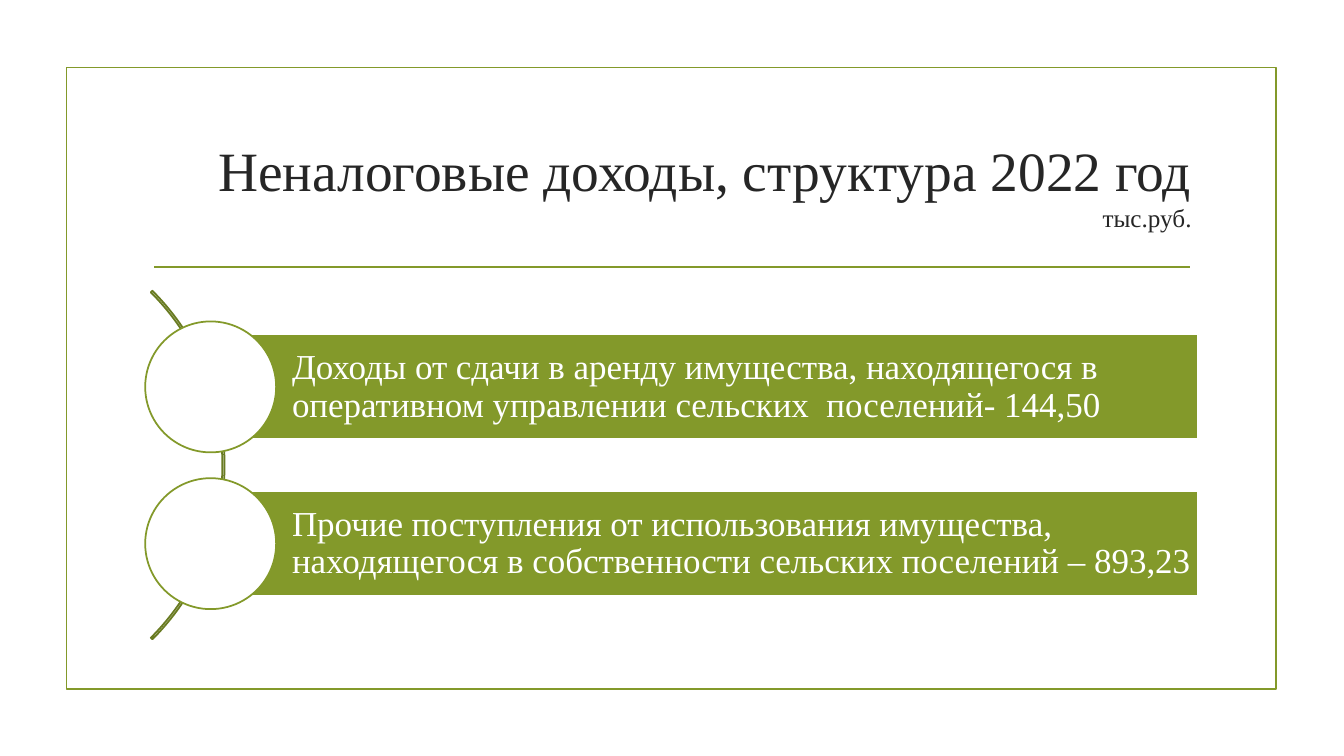
"""Build the slide on the structure of non-tax revenue in 2022."""
from lxml.etree import SubElement
from pptx import Presentation
from pptx.dml.color import RGBColor
from pptx.enum.shapes import MSO_CONNECTOR, MSO_SHAPE
from pptx.enum.text import MSO_ANCHOR, MSO_AUTO_SIZE, PP_ALIGN
from pptx.oxml.ns import qn
from pptx.util import Cm, Pt

GREEN = RGBColor(0x83, 0x99, 0x2A)
DARK_GREEN = RGBColor(0x69, 0x7B, 0x22)
WHITE = RGBColor(0xFF, 0xFF, 0xFF)
INK = RGBColor(0x26, 0x26, 0x26)
FONT = "Times New Roman"
LINE_WIDTH = Pt(1.25)

REVENUES = [
    "Доходы от сдачи в аренду имущества, находящегося в оперативном "
    "управлении сельских  поселений- 144,50",
    "Прочие поступления от использования имущества, находящегося в "
    "собственности сельских поселений – 893,23",
]
FIRST_CENTRE = 9.75
PITCH = 3.95
BAR_HEIGHT = 2.64
CIRCLE_SIZE = 3.3


def add_text(paragraph, text, size, color):
    run = paragraph.add_run()
    run.text = text
    run.font.name = FONT
    run.font.size = Pt(size)
    run.font.color.rgb = color


def set_frame(frame, left, top, right, bottom):
    frame.word_wrap = True
    frame.auto_size = MSO_AUTO_SIZE.NONE
    frame.vertical_anchor = MSO_ANCHOR.MIDDLE
    frame.margin_left, frame.margin_top = Cm(left), Cm(top)
    frame.margin_right, frame.margin_bottom = Cm(right), Cm(bottom)


def add_figure(slide, kind, left, top, width, height, line, fill=None):
    figure = slide.shapes.add_shape(kind, Cm(left), Cm(top), Cm(width), Cm(height))
    figure.shadow.inherit = False
    figure.line.color.rgb = line
    figure.line.width = LINE_WIDTH
    if fill is None:
        figure.fill.background()
    else:
        figure.fill.solid()
        figure.fill.fore_color.rgb = fill
    return figure


def add_rule(slide, left, right, top):
    rule = slide.shapes.add_connector(
        MSO_CONNECTOR.STRAIGHT, Cm(left), Cm(top), Cm(right), Cm(top))
    rule.line.color.rgb = GREEN
    rule.line.width = LINE_WIDTH
    SubElement(rule.line._get_or_add_ln().getparent(), qn("a:effectLst"))


def fill_title(title):
    title.left, title.top = Cm(3.61), Cm(2.72)
    title.width, title.height = Cm(26.67), Cm(3.63)
    set_frame(title.text_frame, 0.25, 0.33, 0.25, 0.13)
    heading = title.text_frame.paragraphs[0]
    heading.alignment = PP_ALIGN.RIGHT
    add_text(heading, "Неналоговые доходы, структура 2022 год", 39.6, INK)
    heading.add_line_break()
    add_text(heading, "тыс.руб.", 18, INK)


def add_arc(slide):
    arc = add_figure(slide, MSO_SHAPE.BLOCK_ARC, -6.76, 5.51, 12.42, 12.42, DARK_GREEN)
    for index, value in enumerate((189, 27, 0.0045)):
        arc.adjustments[index] = value


def add_revenue(slide, text, centre):
    bar = add_figure(slide, MSO_SHAPE.RECTANGLE, 5.28, centre - BAR_HEIGHT / 2,
                     24.92, BAR_HEIGHT, WHITE, GREEN)
    set_frame(bar.text_frame, 2.08, 0.17, 0.15, 0.17)
    label = bar.text_frame.paragraphs[0]
    label.alignment = PP_ALIGN.LEFT
    label.line_spacing = 0.9
    add_text(label, text, 25, WHITE)
    add_figure(slide, MSO_SHAPE.OVAL, 3.66, centre - CIRCLE_SIZE / 2,
               CIRCLE_SIZE, CIRCLE_SIZE, GREEN, WHITE)


def main():
    deck = Presentation()
    deck.slide_width, deck.slide_height = Cm(33.87), Cm(19.05)
    slide = deck.slides.add_slide(deck.slide_layouts[5])
    fill_title(slide.shapes.title)
    add_figure(slide, MSO_SHAPE.RECTANGLE, 1.68, 1.7, 30.48, 15.67, GREEN)
    add_rule(slide, 3.89, 30, 6.73)
    add_arc(slide)
    for index, text in enumerate(REVENUES):
        add_revenue(slide, text, FIRST_CENTRE + index * PITCH)
    deck.save("out.pptx")


if __name__ == "__main__":
    main()
